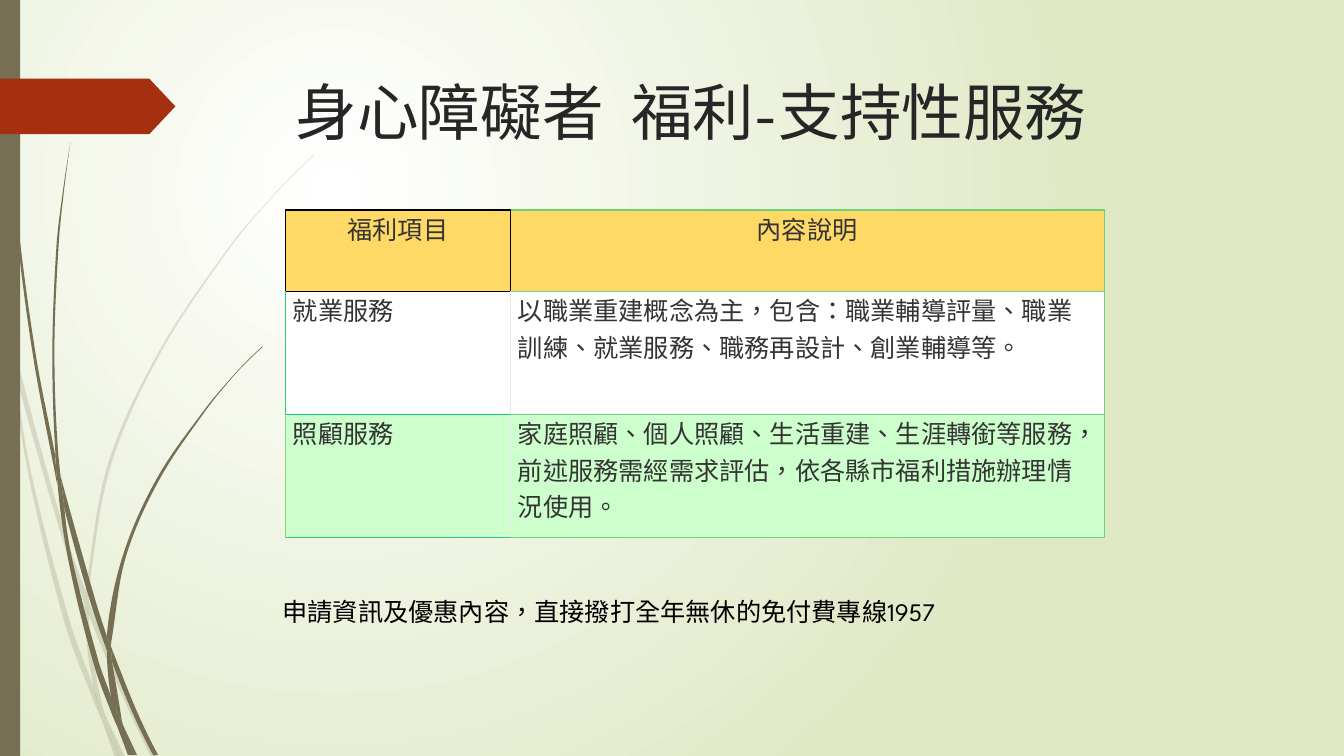
import math
from dataclasses import dataclass

import lxml.etree
import pptx
import pptx.dml.color
import pptx.enum.shapes
import pptx.enum.text
import pptx.oxml.ns
import pptx.util

Pt = pptx.util.Pt
qn = pptx.oxml.ns.qn
Point = tuple[float, float]


@dataclass(frozen=True)
class Theme:
    olive: str = "766F54"
    red: str = "A53010"
    paper: str = "FFFFFF"
    paper_edge: str = "DFE8C4"
    title_ink: str = "262626"
    table_ink: str = "343434"
    note_ink: str = "000000"
    header_fill: str = "FFD966"
    care_fill: str = "CCFFCC"
    green_rule: str = "70D079"
    pale_rule: str = "EAEAEA"
    black_rule: str = "000000"
    heading_font: str = "League Spartan"
    table_font: str = "Arial"
    title_size: float = 44
    body_size: float = 18


THEME = Theme()


@dataclass(frozen=True)
class Blade:
    """A grass sliver: one smooth edge out, another one back."""
    out: list[Point]
    back: list[Point]


@dataclass(frozen=True)
class Cell:
    text: str
    fill: str
    rules: tuple[str, str, str, str]  # left, right, top, bottom
    centred: bool = False


FAINT_GRASS = [
    Blade([(7.9, 252), (6.5, 231.8), (0, 203)], [(0, 215.3), (7.2, 247.7)]),
    Blade([(10.1, 248.4), (44.6, 374.4), (61.2, 421.9)], [(60.5, 431.3), (41.8, 375.8), (12.2, 270.7)]),
    Blade([(63.4, 429.1), (66.2, 437), (91.4, 498.2), (111.6, 540.7)],
          [(108, 540.7), (88.6, 499.7), (63.4, 439.2)]),
    Blade([(75.6, 511.9), (85.7, 540.7)], [(89.3, 540.7)]),
    Blade([(7.9, 252), (20.2, 338.4), (46.8, 447.1), (66.2, 499), (72.7, 514.1)],
          [(71.3, 509), (67, 491.8), (50.4, 445.7), (22.3, 337.7), (12.2, 270.7)]),
    Blade([(60.5, 431.3), (62.6, 465.1), (67, 491.8), (69.1, 498.2), (75.6, 511.9)],
          [(74.2, 508.3), (65.5, 465.1), (63.4, 439.2), (63.4, 437.8)]),
    Blade([(63.4, 429.1), (63.4, 420.5), (79.2, 332.6), (115.2, 251.3), (164.9, 176.4),
           (193, 142.6), (208.8, 126), (224.6, 110.9)],
          [(224.6, 110.2), (208.1, 126), (193, 141.8), (164.2, 175.7), (113.8, 250.6),
           (77, 331.9), (61.2, 420.5), (61.2, 421.9)]),
    Blade([(72.7, 514.1), (82.1, 540.7)], [(85.7, 540.7)]),
    Blade([(63.4, 439.2), (63.4, 429.1)], [(61.2, 421.9), (60.5, 431.3)]),
    Blade([(67, 491.8), (71.3, 509), (72.7, 514.1), (85.7, 540.7)], [(75.6, 511.9), (69.1, 498.2)]),
]
DARK_GRASS = [
    Blade([(2.2, 0), (2.9, 34.6), (5, 79.2), (12.2, 167.8), (23.8, 255.6), (40.3, 343.4), (41, 346.3)],
          [(39.6, 329), (39.6, 326.2), (25.9, 255.6), (13.7, 167), (5.8, 78.5), (3.6, 34.6), (2.9, 0)]),
    Blade([(43.2, 339.8), (67, 424.8), (76.3, 454.3)], [(76.3, 464.4), (63.4, 426.2), (46.1, 363.6)]),
    Blade([(79.2, 461.5), (81.4, 467.3), (97.9, 508.3), (113, 539.3)],
          [(109.4, 539.3), (95, 509.8), (79.9, 472.3)]),
    Blade([(41, 343.4), (49, 401), (67, 474.5), (79.9, 509.8), (84.2, 519.8)],
          [(83.5, 516.2), (79.2, 497.5), (70.6, 473), (51.8, 400.3), (46.1, 363.6)]),
    Blade([(50.4, 101.5), (44.6, 139), (40.3, 176.4), (37.4, 251.3), (39.6, 323.3), (43.2, 339.8)],
          [(41.8, 326.2), (38.9, 251.3), (41.8, 176.4), (45.4, 139), (50.4, 101.5)]),
    Blade([(87.8, 517.7), (95.8, 539.3)], [(97.9, 539.3)]),
    Blade([(39.6, 323.3), (39.6, 326.2), (41, 343.4), (46.1, 363.6)], [(43.2, 339.8)]),
    Blade([(76.3, 454.3), (87.8, 396.7), (112.3, 341.3), (146.9, 291.6), (166.3, 268.6),
           (176.4, 257.8), (187.2, 247.7)],
          [(187.9, 247.7), (176.4, 258.5), (166.3, 269.3), (147.6, 292.3), (113.8, 342.7),
           (90, 397.4), (79.9, 455.8), (79.2, 461.5)]),
    Blade([(84.2, 519.8), (91.4, 539.3)], [(94.3, 539.3)]),
    Blade([(76.3, 464.4), (79.2, 497.5), (83.5, 508.3), (87.8, 517.7)],
          [(87.1, 515.5), (79.9, 472.3), (78.5, 468.7)]),
    Blade([(76.3, 464.4), (76.3, 454.3)], [(79.2, 461.5), (79.9, 472.3)]),
    Blade([(79.2, 497.5), (84.2, 519.8), (93.6, 539.3)], [(95.8, 539.3), (87.8, 517.7), (83.5, 508.3)]),
]

GREEN, PALE, BLACK = THEME.green_rule, THEME.pale_rule, THEME.black_rule
SERVICES = [
    [Cell("福利項目", THEME.header_fill, (BLACK,) * 4, True),
     Cell("內容說明", THEME.header_fill, (BLACK, GREEN, GREEN, GREEN), True)],
    [Cell("就業服務", THEME.paper, ("30C979", PALE, BLACK, "10C979")),
     Cell("以職業重建概念為主，包含：職業輔導評量、職業訓練、就業服務、職務再設計、創業輔導等。",
          THEME.paper, (PALE, GREEN, GREEN, GREEN))],
    [Cell("照顧服務", THEME.care_fill, ("90D379", PALE, "10C979", "30C979")),
     Cell("家庭照顧、個人照顧、生活重建、生涯轉銜等服務，前述服務需經需求評估，依各縣市福利措施辦理情況使用。",
          THEME.care_fill, (PALE, GREEN, GREEN, GREEN))],
]


def rgb(colour: str) -> pptx.dml.color.RGBColor:
    return pptx.dml.color.RGBColor.from_string(colour)


def handles(knots: list[Point]) -> list[tuple[Point, Point]]:
    """Two control points for each span; a tangent is parallel to its neighbours' chord."""
    angles = [math.atan2(d[1] - b[1], d[0] - b[0]) for b, d in zip(knots, knots[2:])]
    chords = [math.atan2(b[1] - a[1], b[0] - a[0]) for a, b in zip(knots, knots[1:])]
    if angles:  # the end spans bend like circular arcs
        angles = [2 * chords[0] - angles[0], *angles, 2 * chords[-1] - angles[-1]]
    else:
        angles = chords * 2
    pairs = []
    for a, b, start, end in zip(knots, knots[1:], angles, angles[1:]):
        reach = math.dist(a, b) / 3
        pairs.append(((a[0] + reach * math.cos(start), a[1] + reach * math.sin(start)),
                      (b[0] - reach * math.cos(end), b[1] - reach * math.sin(end))))
    return pairs


def paint(shape, colour: str, opacity: int = 100) -> None:
    shape.shadow.inherit = False
    shape.fill.solid()
    shape.fill.fore_color.rgb = rgb(colour)
    shape.line.fill.background()
    if opacity < 100:
        tint = next(shape.element.spPr.iter(qn("a:srgbClr")))
        lxml.etree.SubElement(tint, qn("a:alpha"), val=str(opacity * 1000))


def draw_blade(slide, blade: Blade):
    knots = blade.out + blade.back
    builder = slide.shapes.build_freeform(*(c * 100 for c in knots[0]), scale=Pt(1) / 100)
    builder.add_line_segments([(x * 100, y * 100) for x, y in knots[1:]], close=True)
    sliver = builder.convert_to_shape()
    left, top = (min(axis) for axis in zip(*knots))
    spans = handles(blade.out) + [None] + handles(blade.back)
    for side, span in zip(list(sliver.element.iter(qn("a:lnTo"))), spans):
        if span:
            side.tag = qn("a:cubicBezTo")
            for place, (x, y) in enumerate(span):
                side.insert(place, side.makeelement(qn("a:pt"), {
                    "x": str(round((x - left) * 100)), "y": str(round((y - top) * 100))}))
    return sliver


def draw_grass(slide, blades: list[Blade], opacity: int) -> None:
    tuft = [draw_blade(slide, blade) for blade in blades]
    for sliver in tuft:
        paint(sliver, THEME.olive, opacity)
    slide.shapes.add_group_shape(tuft)


def write(paragraph, text: str, font: str, size: float, ink: str) -> None:
    run = paragraph.add_run()
    run.text = text
    run.font.name, run.font.size = font, Pt(size)
    run.font.color.rgb = rgb(ink)
    run.font._element.set("lang", "zh-TW")


def add_line_of_text(slide, box: tuple[float, ...], text: str, size: float, ink: str) -> None:
    frame = slide.shapes.add_textbox(*map(Pt, box)).text_frame
    frame.word_wrap = True
    write(frame.paragraphs[0], text, THEME.heading_font, size, ink)


def fill_cell(cell, content: Cell) -> None:
    cell.margin_left = cell.margin_right = Pt(5.4)
    cell.margin_top = cell.margin_bottom = Pt(0)
    properties = cell._tc.get_or_add_tcPr()
    for side, colour in zip("LRTB", content.rules):
        rule = lxml.etree.SubElement(properties, qn(f"a:ln{side}"), w=str(Pt(1)))
        solid = lxml.etree.SubElement(rule, qn("a:solidFill"))
        lxml.etree.SubElement(solid, qn("a:srgbClr"), val=colour)
    cell.fill.solid()
    cell.fill.fore_color.rgb = rgb(content.fill)
    paragraph = cell.text_frame.paragraphs[0]
    paragraph.space_after = Pt(12)
    if content.centred:
        paragraph.alignment = pptx.enum.text.PP_ALIGN.CENTER
    write(paragraph, content.text, THEME.table_font, THEME.body_size, THEME.table_ink)


def add_services(slide) -> None:
    widths, heights = (160.6, 424.2), (58.3, 87.8, 87.8)
    table = slide.shapes.add_table(3, 2, Pt(203.9), Pt(150), Pt(sum(widths)), Pt(sum(heights))).table
    table.first_row = table.horz_banding = False
    for column, width in zip(table.columns, widths):
        column.width = Pt(width)
    for row, height, contents in zip(table.rows, heights, SERVICES):
        row.height = Pt(height)
        for cell, content in zip(row.cells, contents):
            fill_cell(cell, content)


def paint_background(slide) -> None:
    fill = slide.background.fill
    fill.gradient()
    for stop, colour in zip(fill.gradient_stops, (THEME.paper, THEME.paper_edge)):
        stop.color.rgb = rgb(colour)
    linear = next(slide.element.iter(qn("a:lin")))
    glow = lxml.etree.Element(qn("a:path"), path="circle")
    lxml.etree.SubElement(glow, qn("a:fillToRect"), l="50000", t="50000", r="100000", b="100000")
    linear.getparent().replace(linear, glow)


def main() -> None:
    deck = pptx.Presentation()
    deck.slide_width, deck.slide_height = Pt(960), Pt(540)
    slide = deck.slides.add_slide(deck.slide_layouts[6])
    paint_background(slide)
    draw_grass(slide, FAINT_GRASS, 20)
    draw_grass(slide, DARK_GRASS, 100)
    presets = pptx.enum.shapes.MSO_SHAPE
    paint(slide.shapes.add_shape(presets.RECTANGLE, Pt(0), Pt(0), Pt(14.4), Pt(540)), THEME.olive)
    marker = slide.shapes.add_shape(presets.PENTAGON, Pt(0), Pt(56.2), Pt(125.3), Pt(39.6))
    marker.adjustments[0] = 0.47
    paint(marker, THEME.red)
    add_line_of_text(slide, (204.1, 49, 702, 100.8), "身心障礙者  福利-支持性服務",
                     THEME.title_size, THEME.title_ink)
    add_services(slide)
    add_line_of_text(slide, (194.8, 422.6, 604, 29), "申請資訊及優惠內容，直接撥打全年無休的免付費專線1957",
                     THEME.body_size, THEME.note_ink)
    deck.save("out.pptx")


if __name__ == "__main__":
    main()
